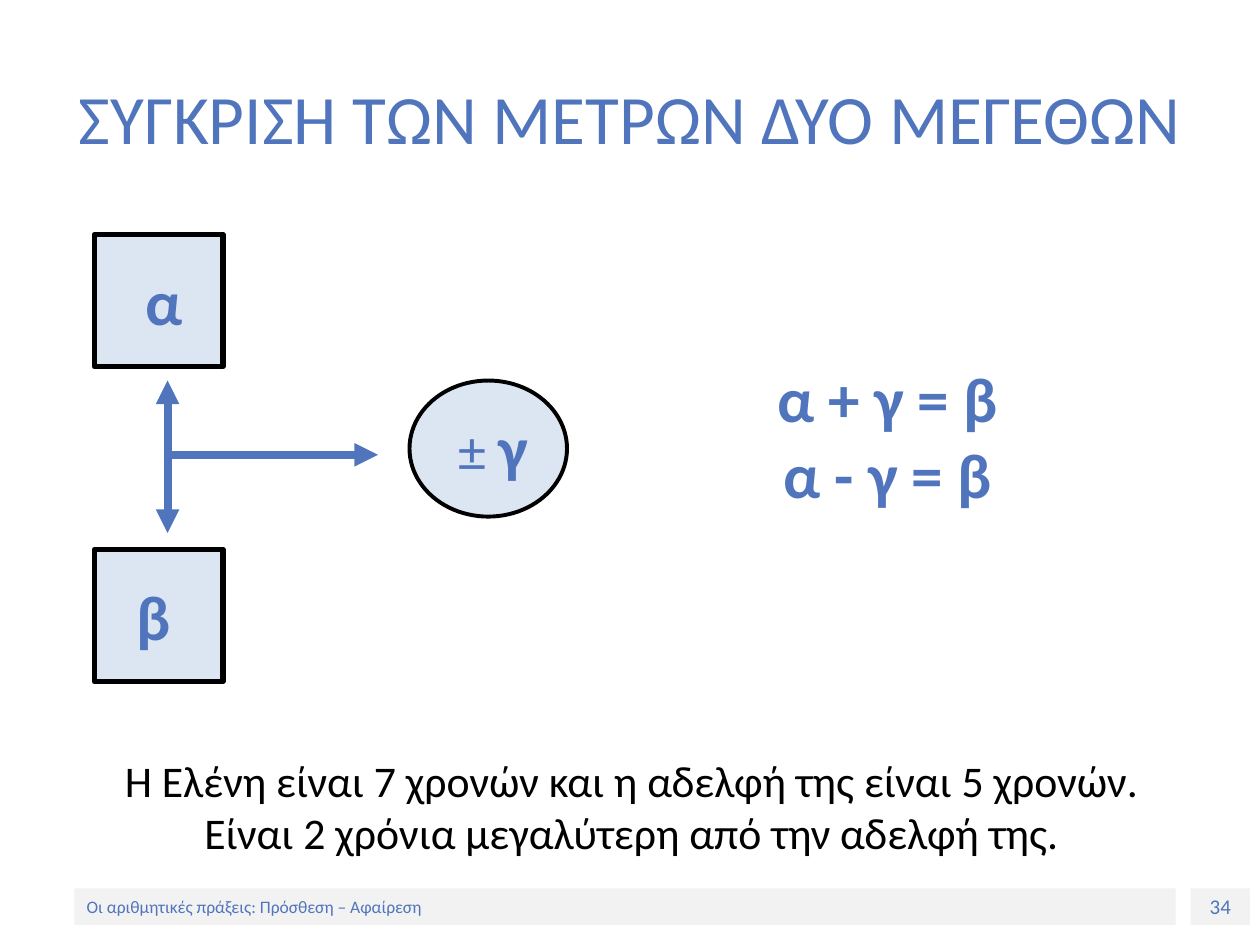
from pptx import Presentation, util as u
from pptx.dml.color import RGBColor
from pptx.enum import shapes, text
from pptx.oxml import ns
from lxml import etree

Inches = u.Inches
FONT = "Calibri"
COLORS = {"blue": "5075BC", "pale": "DCE6F2", "gray": "F2F2F2", "black": "000000"}


def color(name):
    return RGBColor.from_string(COLORS[name])


def write(shape, runs, size, ink="blue", bold=False, align="CENTER", anchor="MIDDLE",
          wrap=True):
    """Fill a shape with one paragraph; runs is a string or (text, size, bold) tuples."""
    if isinstance(runs, str):
        runs = [(runs, size, bold)]
    frame = shape.text_frame
    frame.word_wrap = wrap
    frame.auto_size = text.MSO_AUTO_SIZE.NONE
    frame.vertical_anchor = getattr(text.MSO_ANCHOR, anchor)
    paragraph = frame.paragraphs[0]
    paragraph.alignment = getattr(text.PP_ALIGN, align)
    for words, run_size, run_bold in runs:
        for i, line in enumerate(words.split("\n")):
            if i:
                paragraph.add_line_break()
            run = paragraph.add_run()
            run.text = line
            run.font.name = FONT
            run.font.size = u.Pt(run_size)
            run.font.bold = run_bold
            run.font.color.rgb = color(ink)


def add_label(slide, box, runs, size, **formatting):
    label = slide.shapes.add_textbox(*map(Inches, box))
    write(label, runs, size, **formatting)


def add_panel(slide, kind, box, fill, border=0):
    panel = slide.shapes.add_shape(kind, *map(Inches, box))
    panel.shadow.inherit = False
    panel.fill.solid()
    panel.fill.fore_color.rgb = color(fill)
    if border:
        panel.line.color.rgb = color("black")
        panel.line.width = u.Pt(border)
    else:
        panel.line.fill.background()
    return panel


def add_arrow(slide, start, end, ends):
    arrow = slide.shapes.add_connector(shapes.MSO_CONNECTOR.STRAIGHT,
                                       *map(Inches, (*start, *end)))
    arrow.line.color.rgb = color("blue")
    arrow.line.width = u.Pt(4.5)
    for end_name in ends:
        etree.SubElement(arrow.line._get_or_add_ln(), ns.qn("a:" + end_name), type="triangle")
    etree.SubElement(arrow._element.spPr, ns.qn("a:effectLst"))


def add_title(slide, box):
    title = slide.shapes.title
    title.left, title.top, title.width, title.height = map(Inches, box)
    write(title, "ΣΥΓΚΡΙΣΗ ΤΩΝ ΜΕΤΡΩΝ ΔΥΟ ΜΕΓΕΘΩΝ", 39.6)


def add_comparison(slide, box):
    left, top, width, height = box
    side_w, side_h = 1.02, 1.05

    # The two quantities, one at each end of the box
    for letter, y, shift in (("α", top, 0.04), ("β", top + height - side_h, -0.04)):
        add_panel(slide, shapes.MSO_SHAPE.RECTANGLE, (left, y, side_w, side_h), "pale", 3)
        add_label(slide, (left + shift, y, side_w, side_h), letter, 36, bold=True)

    # The difference between them
    oval_w, oval_h = 1.25, 1.08
    oval_left, oval_top = left + width - oval_w, top + 1.16
    add_panel(slide, shapes.MSO_SHAPE.OVAL, (oval_left, oval_top, oval_w, oval_h),
              "pale", 2.25)
    add_label(slide, (oval_left + 0.08, oval_top + 0.17, oval_w - 0.08, 0.7),
              [("± ", 32, False), ("γ", 36, True)], 36, anchor="TOP")

    # Arrows linking the quantities and the difference
    axis, middle = left + 0.58, top + 1.75
    add_arrow(slide, (axis, middle), (oval_left - 0.25, middle), ["tailEnd"])
    add_arrow(slide, (axis, top + 2.37), (axis, top + 1.16), ["headEnd", "tailEnd"])


def add_footer(slide, box):
    left, top, width, height = box
    number_w, gap = 0.47, 0.12
    bar_w = width - number_w - gap
    bar = add_panel(slide, shapes.MSO_SHAPE.RECTANGLE, (left, top, bar_w, height), "gray")
    write(bar, "Οι αριθμητικές πράξεις: Πρόσθεση – Αφαίρεση", 10, align="LEFT")
    number = add_panel(slide, shapes.MSO_SHAPE.RECTANGLE,
                       (left + bar_w + gap, top, number_w, height), "gray")
    write(number, "34", 12)


def main():
    deck = Presentation()
    deck.slide_width, deck.slide_height = Inches(10), Inches(7.5)
    slide = deck.slides.add_slide(deck.slide_layouts[5])

    add_footer(slide, (0.59, 7.05, 9.33, 0.29))
    add_title(slide, (0.5, 0.3, 9, 1.25))
    add_comparison(slide, (0.75, 1.86, 3.75, 3.55))

    # Equations and worked example
    add_label(slide, (6.06, 2.8, 1.97, 1.31), "α + γ = β\nα - γ = β", 36, bold=True,
              wrap=False)
    add_label(slide, (0.51, 5.93, 9, 0.95),
              "Η Ελένη είναι 7 χρονών και η αδελφή της είναι 5 χρονών. "
              "Είναι 2 χρόνια μεγαλύτερη από την αδελφή της.",
              25, ink="black", anchor="TOP")

    deck.save("out.pptx")


if __name__ == "__main__":
    main()
